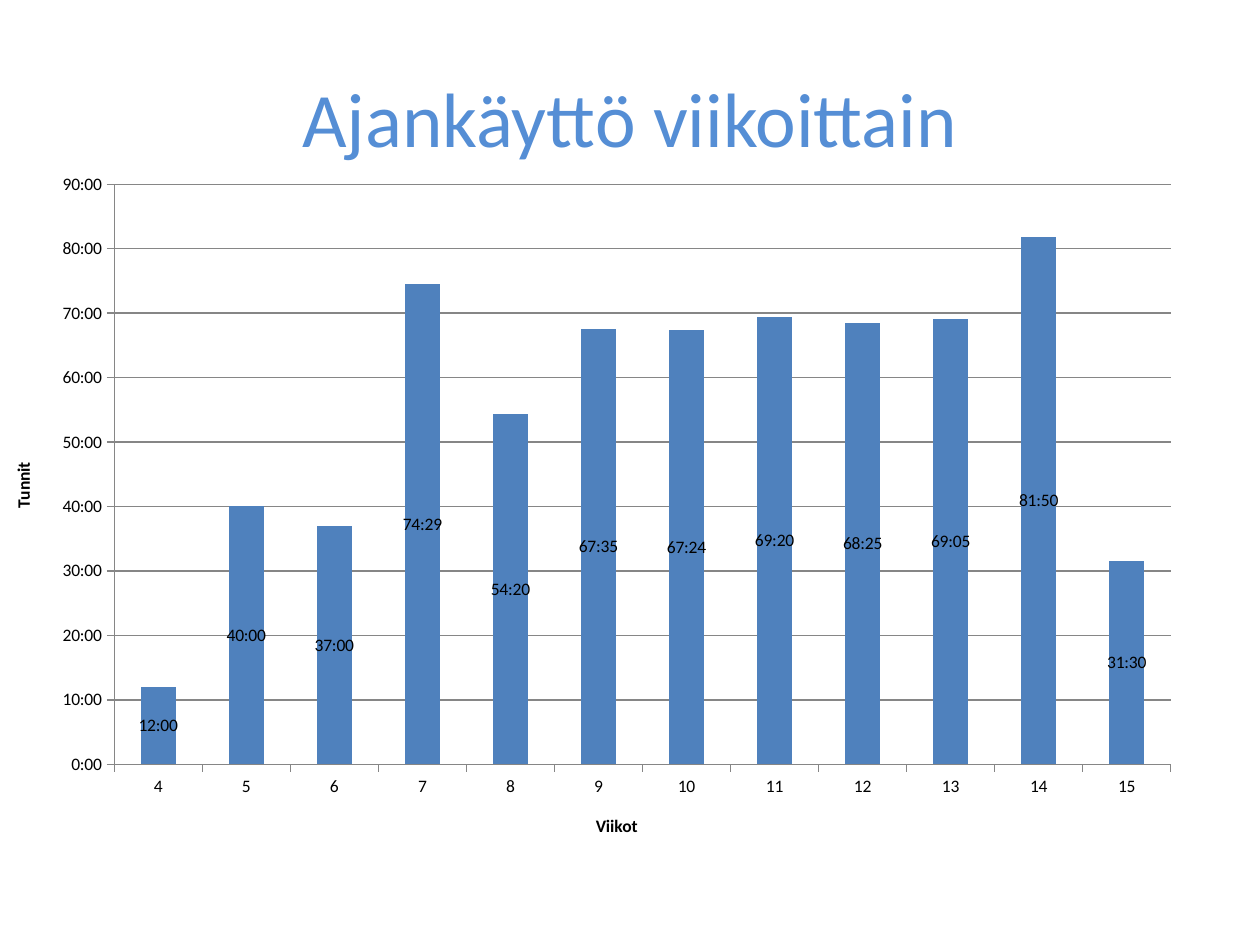
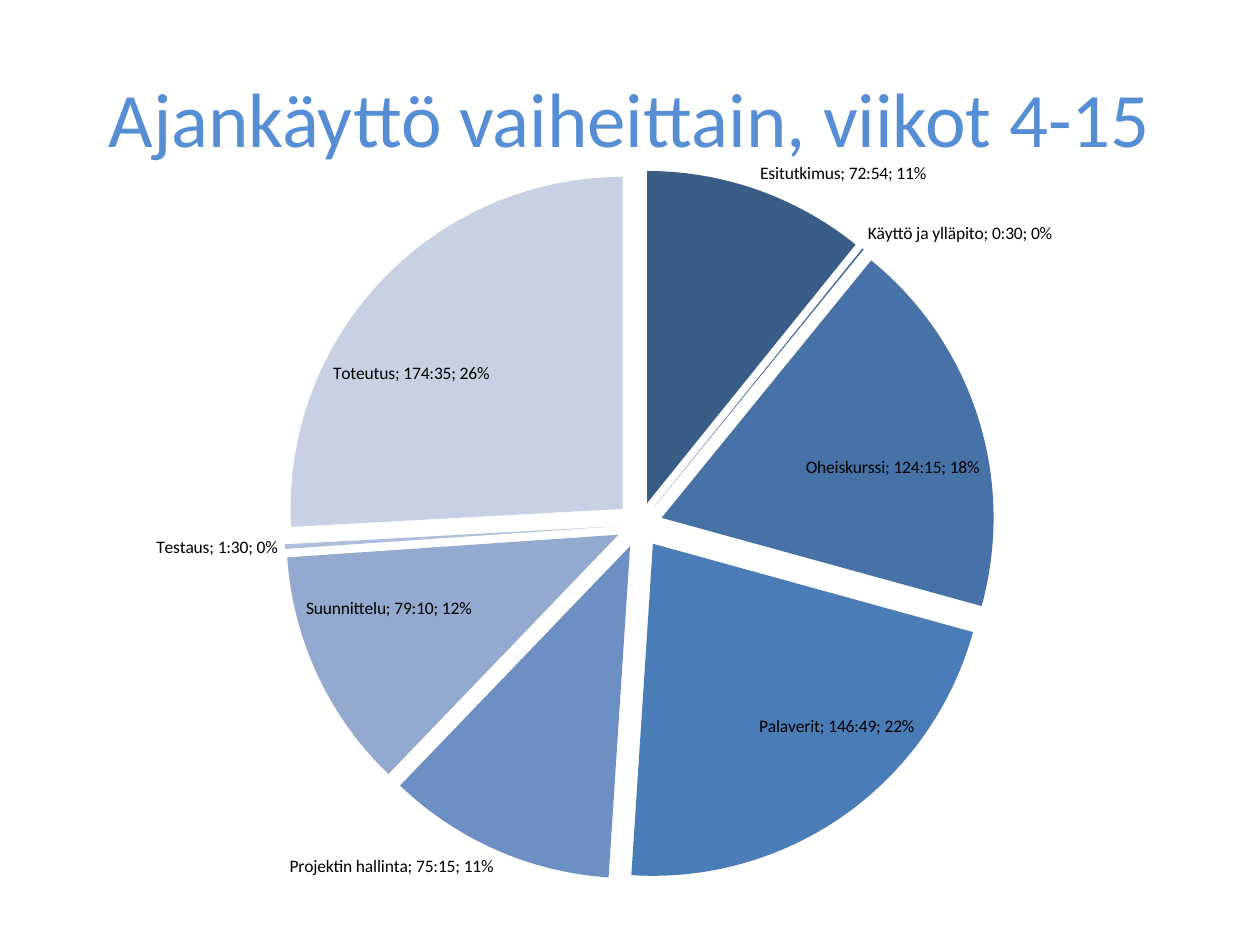
"""Build two slides on project hours: columns by week and a pie by phase."""
from dataclasses import dataclass

import pptx
import pptx.chart.data
import pptx.dml.color
import pptx.enum.chart
import pptx.enum.text
import pptx.oxml
import pptx.oxml.ns
import pptx.util
from pptx.util import Inches

COLORS = {"title": "558ED5", "text": "000000", "axis": "868686", "column": "4F81BD"}
PHASE_SHADES = ["385D87", "3E669A", "4672A8", "4A7CB7",
                "6C90C4", "94A9CF", "AEBDDB", "C8D1E4"]
FONT = "Calibri"
HOURS_FORMAT = "[h]:mm"
CHART_NS = pptx.oxml.ns.nsdecls("c")
CLOCK_STYLE = {"number_format": HOURS_FORMAT, "number_format_is_linked": False}
Kind = pptx.enum.chart.XL_CHART_TYPE


@dataclass
class HoursSlide:
    title: str
    kind: int
    box: tuple[float, float, float, float]
    plot_area: tuple[float, float, float, float]
    hours: dict[str, str]


WEEKS = HoursSlide(
    "Ajankäyttö viikoittain", Kind.COLUMN_STACKED,
    (-0.04, 0.99, 9.37, 5.83), (0.101, 0.081, 0.895, 0.79),
    {"4": "12:00", "5": "40:00", "6": "37:00", "7": "74:29", "8": "54:20", "9": "67:35",
     "10": "67:24", "11": "69:20", "12": "68:25", "13": "69:05", "14": "81:50", "15": "31:30"})
PHASES = HoursSlide(
    "Ajankäyttö vaiheittain, viikot 4-15", Kind.PIE,
    (-0.08, 1.07, 10.07, 6.15), (0.232, 0.045, 0.56, 0.917),
    {"Esitutkimus": "72:54", "Käyttö ja ylläpito": "0:30", "Oheiskurssi": "124:15",
     "Palaverit": "146:49", "Projektin hallinta": "75:15", "Suunnittelu": "79:10",
     "Testaus": "1:30", "Toteutus": "174:35"})


def rgb(color: str) -> pptx.dml.color.RGBColor:
    return pptx.dml.color.RGBColor.from_string(color)


def apply(target, values: dict) -> None:
    for name, value in values.items():
        setattr(target, name, value)


def style_font(font, size: float, color: str, bold: bool = False) -> None:
    apply(font, {"name": FONT, "size": pptx.util.Pt(size), "bold": bold})
    font.color.rgb = rgb(color)


def fill_solid(fill, color: str) -> None:
    fill.solid()
    fill.fore_color.rgb = rgb(color)


def in_days(clock: str) -> float:
    hours, minutes = map(int, clock.split(":"))
    return (hours * 60 + minutes) / 1440


def place_plot(chart, plot_area: tuple[float, float, float, float]) -> None:
    parts = "".join(f'<c:{tag} val="{value}"/>' for tag, value in zip("xywh", plot_area))
    layout = pptx.oxml.parse_xml(
        f'<c:layout {CHART_NS}><c:manualLayout><c:layoutTarget val="inner"/>'
        f'<c:xMode val="edge"/><c:yMode val="edge"/>{parts}</c:manualLayout></c:layout>')
    area = chart._chartSpace.chart.plotArea
    for automatic in area.findall(pptx.oxml.ns.qn("c:layout")):
        area.remove(automatic)
    area.insert(0, layout)


def add_hours_slide(deck, content: HoursSlide):
    slide = deck.slides.add_slide(deck.slide_layouts[5])
    heading = slide.shapes.title
    apply(heading, {"left": Inches(0.5), "top": Inches(0.3),
                    "width": Inches(9), "height": Inches(1.25)})
    frame = heading.text_frame
    frame.text = content.title
    frame.vertical_anchor = pptx.enum.text.MSO_ANCHOR.MIDDLE
    frame.paragraphs[0].alignment = pptx.enum.text.PP_ALIGN.CENTER
    style_font(frame.paragraphs[0].runs[0].font, 44, COLORS["title"])

    hours = pptx.chart.data.CategoryChartData(number_format=HOURS_FORMAT)
    hours.categories = list(content.hours)
    hours.add_series("Series 1", [round(in_days(clock), 6) for clock in content.hours.values()])
    chart = slide.shapes.add_chart(content.kind, *map(Inches, content.box), hours).chart
    apply(chart, {"has_title": False, "has_legend": False})
    style_font(chart.font, 10, COLORS["text"])
    place_plot(chart, content.plot_area)
    plot = chart.plots[0]
    apply(plot, {"vary_by_categories": content.kind == Kind.PIE, "has_data_labels": True})
    plot.data_labels.show_value = True
    style_font(plot.data_labels.font, 10, COLORS["text"])
    return chart


def style_columns(chart) -> None:
    plot = chart.plots[0]
    apply(plot, {"gap_width": 150, "overlap": 100})
    fill_solid(plot.series[0].format.fill, COLORS["column"])
    hours_axis = chart.value_axis
    apply(hours_axis, {"minimum_scale": 0, "maximum_scale": in_days("90:00"),
                       "major_unit": in_days("10:00"), "has_major_gridlines": True})
    for clock_text in (plot.data_labels, hours_axis.tick_labels):
        apply(clock_text, CLOCK_STYLE)
    for axis, name in ((chart.category_axis, "Viikot"), (hours_axis, "Tunnit")):
        apply(axis, {"major_tick_mark": pptx.enum.chart.XL_TICK_MARK.OUTSIDE,
                     "minor_tick_mark": pptx.enum.chart.XL_TICK_MARK.NONE})
        axis.axis_title.text_frame.text = name
        run = axis.axis_title.text_frame.paragraphs[0].runs[0]
        style_font(run.font, 10, COLORS["text"], bold=True)
    for line in (chart.category_axis.format.line, hours_axis.format.line,
                 hours_axis.major_gridlines.format.line):
        line.width = pptx.util.Pt(0.75)
        line.color.rgb = rgb(COLORS["axis"])


def style_pie(chart) -> None:
    plot = chart.plots[0]
    labels = plot.data_labels
    apply(labels, {"show_category_name": True, "show_percentage": True,
                   "position": pptx.enum.chart.XL_LABEL_POSITION.BEST_FIT})
    separator = pptx.oxml.parse_xml(f"<c:separator {CHART_NS}>; </c:separator>")
    labels._element.find(pptx.oxml.ns.qn("c:showBubbleSize")).addnext(separator)
    phases = plot.series[0]
    explosion = pptx.oxml.parse_xml(f'<c:explosion {CHART_NS} val="7"/>')
    phases._element.find(pptx.oxml.ns.qn("c:cat")).addprevious(explosion)
    for index, shade in enumerate(PHASE_SHADES):
        fill_solid(phases.points[index].format.fill, shade)


def main() -> None:
    deck = pptx.Presentation()
    apply(deck, {"slide_width": Inches(10), "slide_height": Inches(7.5)})
    style_columns(add_hours_slide(deck, WEEKS))
    style_pie(add_hours_slide(deck, PHASES))
    deck.save("out.pptx")


if __name__ == "__main__":
    main()
